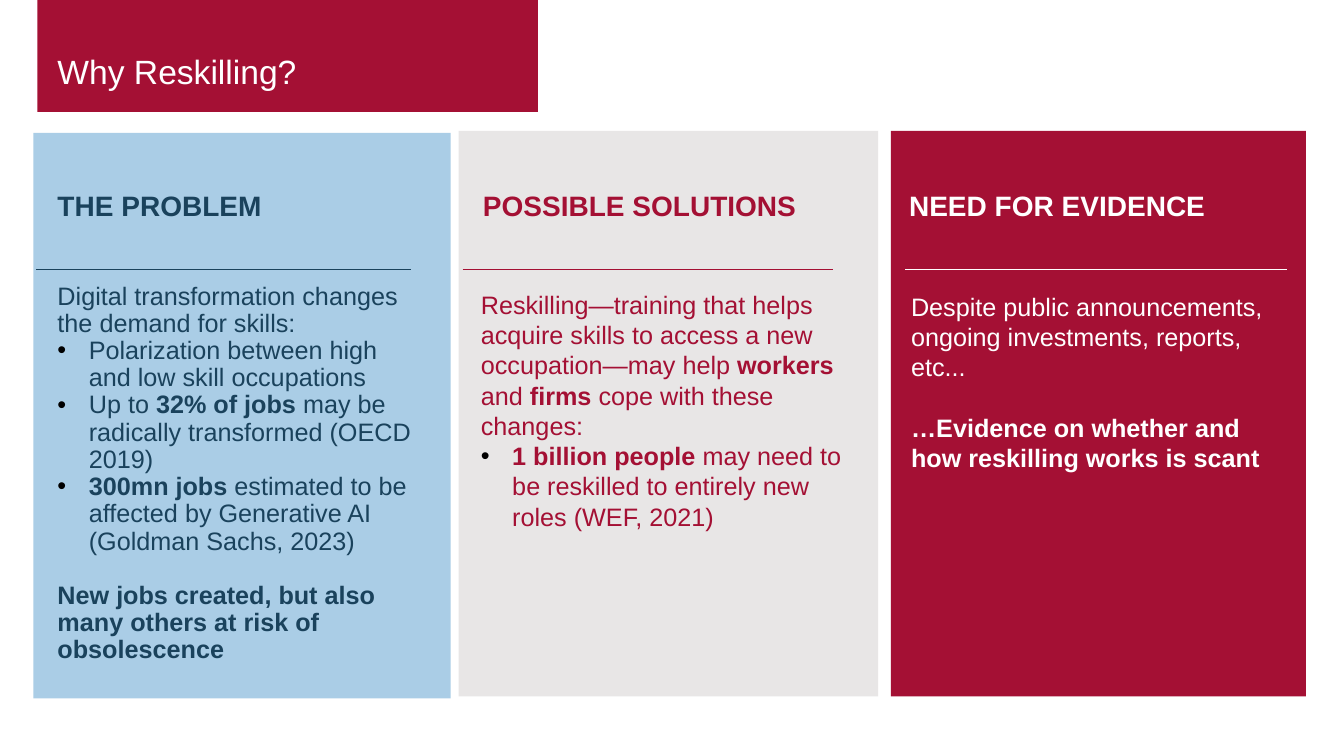
from dataclasses import dataclass

from lxml.etree import SubElement
from pptx import Presentation
from pptx.dml.color import RGBColor
from pptx.enum.shapes import MSO_CONNECTOR as Connector, MSO_SHAPE as Shape
from pptx.enum.text import MSO_ANCHOR as Anchor, PP_ALIGN as Align
from pptx.oxml.ns import qn
from pptx.util import Cm, Pt


@dataclass(frozen=True)
class Theme:
    font: str = "Arial"
    crimson: str = "A41034"
    navy: str = "1A425C"
    sky: str = "AACDE6"
    gray: str = "E8E6E6"
    white: str = "FFFFFF"
    bullet: str = "000000"
    title_size: int = 24
    heading_size: int = 20
    body_size: int = 18
    line_height: float = 21.5  # points, one body line at single spacing
    rule_width: float = 0.75


THEME = Theme()
TEXT_INSETS = (0.51, 0.13, 0.25, 0.13)
TITLE_INSETS = (0.51, 1.5, 0.2, 0.51)


@dataclass(frozen=True)
class Panel:
    box: tuple  # left, top, width, height in cm
    fill: str
    ink: str
    heading: str
    heading_shift: float  # shifts are from the panel's left edge
    rule_shift: float
    rule_length: float
    body_shift: float
    body_drop: float  # from the panel's top edge
    body_height: float
    paragraphs: tuple  # (kind, runs); every second run is bold
    line_spacing: float = 1.0


PANELS = (
    Panel(
        (0.84, 3.35, 10.52, 14.25), THEME.sky, THEME.navy, "THE PROBLEM",
        0.1, 0.07, 9.45, 0.1, 3.66, 10.49,
        (
            ("text", ("Digital transformation changes the demand for skills:",)),
            ("bullet", ("Polarization between high and low skill occupations",)),
            ("bullet", ("Up to ", "32% of jobs ",
                        "may be radically transformed (OECD 2019)")),
            ("bullet", ("", "300mn jobs ", "estimated to be affected by "
                        "Generative AI (Goldman Sachs, 2023)")),
            ("closing", ("", "New jobs created, but also many others "
                         "at risk of obsolescence")),
        ),
        line_spacing=0.9,
    ),
    Panel(
        (11.56, 3.3, 10.57, 14.25), THEME.gray, THEME.crimson, "POSSIBLE SOLUTIONS",
        0.1, 0.1, 9.32, 0.05, 3.86, 8.64,
        (
            ("text", ("Reskilling—training that helps acquire skills to access "
                      "a new occupation—may help ", "workers", " and ", "firms",
                      " cope with these changes:")),
            ("bullet", ("", "1 billion people ", "may need to be reskilled to "
                        "entirely new roles (WEF, 2021)")),
        ),
    ),
    Panel(
        (22.45, 3.3, 10.46, 14.25), THEME.crimson, THEME.white, "NEED FOR EVIDENCE",
        -0.05, 0.36, 9.63, 0, 3.91, 8.64,
        (
            ("text", ("Despite public announcements, ongoing investments, "
                      "reports, etc...",)),
            ("closing", ("", "…Evidence on whether and how reskilling works "
                         "is scant")),
        ),
    ),
)


def rgb(color):
    return RGBColor.from_string(color)


def set_font(paragraph, size, color, bold=None):
    font = paragraph.font
    font.name, font.size, font.bold = THEME.font, Pt(size), bold
    font.color.rgb = rgb(color)


def add_bullet(paragraph):
    properties = paragraph._p.get_or_add_pPr()
    properties.set("marL", str(Cm(0.79)))
    properties.set("indent", str(-Cm(0.79)))
    color = SubElement(properties, qn("a:buClr"))
    SubElement(color, qn("a:srgbClr"), val=THEME.bullet)
    SubElement(properties, qn("a:buFont"), typeface=THEME.font)
    SubElement(properties, qn("a:buChar"), char="•")


def prepare_frame(shape, insets, anchor=Anchor.TOP):
    frame = shape.text_frame
    frame.word_wrap = True
    frame.vertical_anchor = anchor
    (frame.margin_left, frame.margin_top,
     frame.margin_right, frame.margin_bottom) = map(Cm, insets)
    return frame


def add_block(slide, box, fill):
    shape = slide.shapes.add_shape(Shape.RECTANGLE, *map(Cm, box))
    shape.shadow.inherit = False
    shape.fill.solid()
    shape.fill.fore_color.rgb = rgb(fill)
    shape.line.fill.background()
    return shape


def add_text_frame(slide, box):
    return prepare_frame(slide.shapes.add_textbox(*map(Cm, box)), TEXT_INSETS)


def add_rule(slide, left, top, length, color):
    rule = slide.shapes.add_connector(
        Connector.STRAIGHT, Cm(left), Cm(top), Cm(left + length), Cm(top))
    rule.line.color.rgb = rgb(color)
    rule.line.width = Pt(THEME.rule_width)
    SubElement(rule._element.spPr, qn("a:effectLst"))


def add_title(slide, box, text):
    block = add_block(slide, box, THEME.crimson)
    paragraph = prepare_frame(block, TITLE_INSETS, Anchor.BOTTOM).paragraphs[0]
    paragraph.text = text
    paragraph.alignment = Align.LEFT
    paragraph.line_spacing = 0.9
    set_font(paragraph, THEME.title_size, THEME.white)


def add_body(slide, box, panel):
    frame = add_text_frame(slide, box)
    for index, (kind, runs) in enumerate(panel.paragraphs):
        paragraph = frame.add_paragraph() if index else frame.paragraphs[0]
        paragraph.line_spacing = panel.line_spacing
        if kind == "closing":
            paragraph.space_before = Pt(THEME.line_height * panel.line_spacing)
        if kind == "bullet":
            add_bullet(paragraph)
        set_font(paragraph, THEME.body_size, panel.ink)
        for position, text in enumerate(runs):
            if text:
                run = paragraph.add_run()
                run.text = text
                run.font.bold = position % 2 == 1


def add_panel(slide, panel):
    left, top, width, height = panel.box
    add_block(slide, panel.box, panel.fill)

    # Heading and rule share one height across the panels
    heading_box = (left + panel.heading_shift, 4.62, 9.42, 1.19)
    heading = add_text_frame(slide, heading_box).paragraphs[0]
    heading.text = panel.heading
    set_font(heading, THEME.heading_size, panel.ink, bold=True)
    add_rule(slide, left + panel.rule_shift, 6.78, panel.rule_length, panel.ink)

    # Body text
    body_box = (left + panel.body_shift, top + panel.body_drop, 10.01,
                panel.body_height)
    add_body(slide, body_box, panel)


def main():
    presentation = Presentation()
    presentation.slide_width, presentation.slide_height = Cm(33.87), Cm(19.05)
    slide = presentation.slides.add_slide(presentation.slide_layouts[6])
    for panel in PANELS:
        add_panel(slide, panel)
    add_title(slide, (0.94, 0, 12.62, 2.82), "Why Reskilling?")
    presentation.save("out.pptx")


if __name__ == "__main__":
    main()
